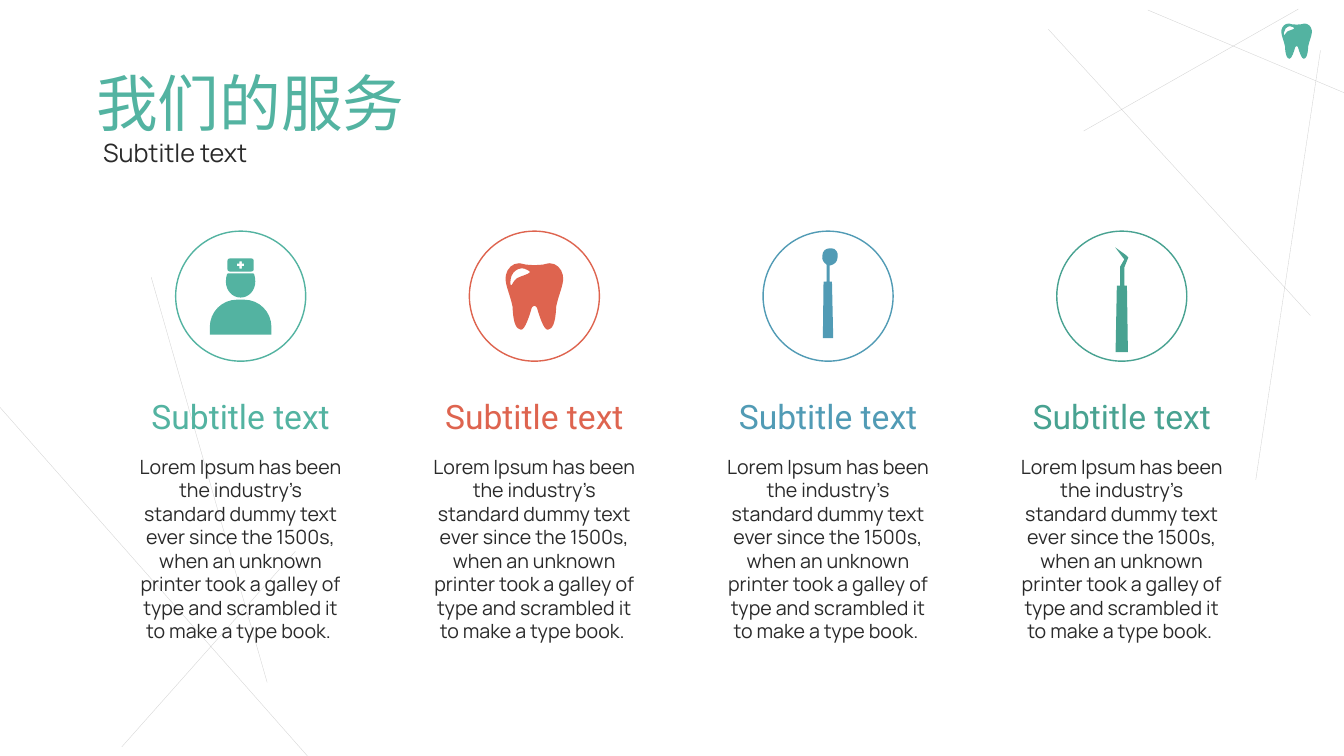
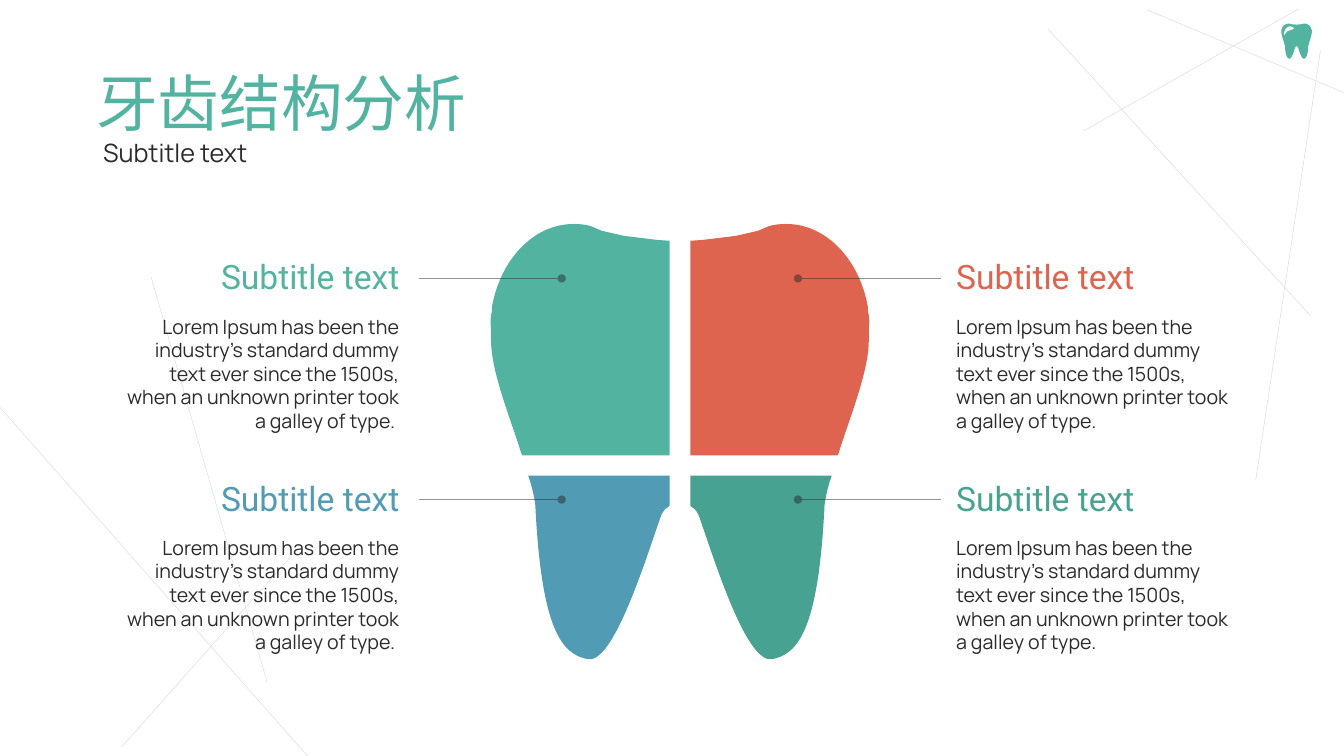
from pptx import Presentation
from pptx.dml.color import RGBColor
from pptx.enum.shapes import MSO_CONNECTOR, MSO_SHAPE
from pptx.enum.text import MSO_ANCHOR, MSO_AUTO_SIZE, PP_ALIGN
from pptx.oxml.ns import qn
from pptx.oxml.xmlchemy import OxmlElement
from pptx.util import Pt

LEFT, CENTER, RIGHT = PP_ALIGN.LEFT, PP_ALIGN.CENTER, PP_ALIGN.RIGHT
TOP, BOTTOM = MSO_ANCHOR.TOP, MSO_ANCHOR.BOTTOM
STRAIGHT, OVAL = MSO_CONNECTOR.STRAIGHT, MSO_SHAPE.OVAL
NO_FIT, GROW = MSO_AUTO_SIZE.NONE, MSO_AUTO_SIZE.SHAPE_TO_FIT_TEXT

COLORS = {
    "mint": "53B3A1",
    "coral": "DE644F",
    "blue": "519BB5",
    "green": "48A291",
    "ink": "2A2A2A",
    "white": "FFFFFF",
}

# Font size, typeface, frame settings and paragraph settings of each kind of text
STYLES = {
    "title": (44, "Noto Sans CJK SC",
              {"vertical_anchor": BOTTOM, "auto_size": NO_FIT}, {"line_spacing": 0.9}),
    "subtitle": (18, "Manrope",
                 {"vertical_anchor": TOP, "auto_size": NO_FIT},
                 {"line_spacing": 0.9, "space_before": Pt(10)}),
    "heading": (24, "Roboto",
                {"vertical_anchor": BOTTOM, "auto_size": GROW}, {"space_after": Pt(10)}),
    "body": (14, "Manrope",
             {"vertical_anchor": TOP, "auto_size": GROW}, {"space_after": Pt(10)}),
}

SUBTITLE = "Subtitle text"
SERVICE_TEXT = (
    "Lorem Ipsum has been the industry's standard dummy text ever since the 1500s, "
    "when an unknown printer took a galley of type and scrambled it to make a type book. "
)
PART_TEXT = (
    "Lorem Ipsum has been the industry's standard dummy text ever since the 1500s, "
    "when an unknown printer took a galley of type."
)
SERVICES = [
    ("dentist", "mint", SUBTITLE, SERVICE_TEXT),
    ("tooth", "coral", SUBTITLE, SERVICE_TEXT),
    ("mirror", "blue", SUBTITLE, SERVICE_TEXT),
    ("probe", "green", SUBTITLE, SERVICE_TEXT),
]
# Rows from top to bottom, each with its left and right part
TOOTH_PARTS = [
    ("crown", [("mint", SUBTITLE, PART_TEXT + " "), ("coral", SUBTITLE, PART_TEXT)]),
    ("root", [("blue", SUBTITLE, PART_TEXT + " "), ("green", SUBTITLE, PART_TEXT)]),
]

BACKGROUND_LINES = [
    ((0, 291), (219.6, 540)),
    ((108, 198), (190.8, 487.4)),
    ((211, 393.8), (87, 533.5)),
    ((748.8, 20.9), (936, 225.4)),
    ((820, 7.2), (960, 66.2)),
    ((774, 93.6), (927.4, 6.5)),
    ((897, 342.7), (943.2, 36)),
]

# Outlines: a pair is a corner, six numbers are a cubic curve.
# A "half" outline is completed by its mirror image across x = 0.
PICTOGRAMS = {
    "dentist": [
        ("half", [(0, 2.5), (2.5, 2.5), (13.3, 2.5, 22, 11.2, 22, 22), (22, 27.4), (0, 27.4)]),
        ("half", [(0, -16.2), (9.2, -16.2), (9.7, -15.5),
                  (10.2, -14, 10.5, -12.5, 10.5, -10.5), (10.5, -4, 5.8, 1, 0, 1)]),
        ("half", [(0, -27), (7.7, -27), (8.8, -27, 9.4, -26.3, 9.4, -25.3), (9.4, -19.3),
                  (9.4, -18.2, 8.8, -17.6, 7.7, -17.6), (0, -17.6)]),
        ("half", [(0, -24.9), (0.9, -24.9), (0.9, -23.2), (2.6, -23.2),
                  (2.6, -21.4), (0.9, -21.4), (0.9, -19.7), (0, -19.7)]),
    ],
    "tooth": [
        ("half", [(0, -22.1), (6, -22.5), (9.5, -23.3), (11, -23.5),
                  (15.5, -23.5, 19.4, -19.9, 20.4, -14.9), (20.6, -11.3), (20.4, -10.5),
                  (20, -6.2, 17, 0.3, 15.6, 7.5), (15, 21.1, 12.5, 23.3, 9.7, 24),
                  (6.8, 24.7, 3.2, 13.2, 1.9, 8.4), (1.2, 7.5), (0, 6.9)]),
        ("whole", [(-9, -19.9), (-10.4, -19.9, -12.6, -19.2, -14.8, -17),
                   (-17.6, -14.1, -17.2, -8.5, -16.9, -7.7),
                   (-16.2, -6.9, -14.8, -11.3, -12.6, -12.7),
                   (-10.4, -14.1, -4, -15.6, -3.2, -17),
                   (-2.5, -17.7, -6.8, -19.9, -9, -19.9)]),
    ],
    "mirror": [
        ("whole", [(-3.2, -10.4), (2.8, -10.4), (3.7, 29.9), (-3.7, 29.9)]),
        ("whole", [(1.1, -34.2), (2.5, -34.2), (5.4, -34.2, 7.6, -31.3, 6.8, -27.7),
                   (6.8, -24.8, 4.7, -22.7, 1.8, -22), (1.1, -22), (1.1, -10.4),
                   (-1.1, -10.4), (-1.1, -22.6), (-3.2, -24, -4.7, -26.3, -4, -29.2),
                   (-4, -32, -1.8, -34.2, 1.1, -34.2)]),
    ],
    "probe": [
        ("whole", [(-4.7, -34.9), (3.2, -29.2), (4.7, -27.7), (1.8, -20.5), (1.8, -7.6),
                   (3.7, -7.6), (4.4, 39.9), (-4.4, 39.9), (-3.5, -7.6), (-1.1, -7.6),
                   (-1.1, -21.2), (1.8, -26.3)]),
    ],
}
# Right-hand parts of the large tooth, x measured from its axis
PART_OUTLINES = {
    "crown": [(76, 160), (104.8, 160, 128.5, 185.8, 134.3, 219.6), (134.3, 222.5),
              (134.8, 224.6), (135.4, 228.2, 135.4, 231, 135, 234), (135, 241.2), (134.8, 247),
              (133.6, 265, 125.6, 287.3, 117, 312.5), (112.8, 325.3), (7.4, 325.3), (7.4, 172),
              (16.2, 171.4), (40, 168.5), (55.8, 164.9), (63.7, 161.5),
              (67.3, 160.4, 71.6, 160, 76, 160)],
    "root": [(7.4, 339.8), (108.4, 339.8), (107, 344), (105.5, 349.2, 104, 355, 103.3, 360.7),
             (99, 449.3, 84.6, 467.3, 65.9, 470.9), (47.2, 474.5, 24.1, 398.2, 13.3, 367.9),
             (12.6, 366.5, 11.9, 365, 10.4, 363.6), (7.4, 361.4)],
}


def rgb(color):
    return RGBColor.from_string(COLORS[color])


def pairs(segment):
    return list(zip(segment[::2], segment[1::2]))


def mirror(outline):
    """Flip an outline across x = 0 and run it backwards, keeping its curves."""
    flipped = [[(-x, y) for x, y in pairs(segment)] for segment in outline]
    result = [flipped[-1][-1]]
    for segment, before in zip(flipped[:0:-1], flipped[-2::-1]):
        points = segment[-2::-1] + [before[-1]]
        result.append(tuple(value for point in points for value in point))
    return result


def paint(shape, fill, line=None):
    shape.shadow.inherit = False
    shape.fill.solid()
    shape.fill.fore_color.rgb = rgb(fill)
    if line:
        shape.line.color.rgb = rgb(line)
        shape.line.width = Pt(1)
    else:
        shape.line.fill.background()


def add_outline(page, outlines, x, y, color, scale=1):
    """Draw closed outlines as one shape; inner outlines become holes."""
    builder = None
    for outline in outlines:
        points = [(Pt(x + px * scale), Pt(y + py * scale))
                  for segment in outline for px, py in pairs(segment)]
        if builder is None:
            builder = page.shapes.build_freeform(*points[0])
        else:
            builder.move_to(*points[0])
        builder.add_line_segments(points[1:], close=True)
    shape = builder.convert_to_shape()
    paint(shape, color)
    steps = iter(list(shape.element.iter(qn("a:lnTo"))))
    for segment in (segment for outline in outlines for segment in outline[1:]):
        group = [next(steps) for _ in pairs(segment)]
        if len(group) == 3:
            curve = OxmlElement("a:cubicBezTo")
            group[0].addprevious(curve)
            for step in group:
                curve.append(step[0])
                step.getparent().remove(step)


def add_pictogram(page, name, x, y, color, scale=1):
    outlines = [outline + mirror(outline)[1:] if kind == "half" else outline
                for kind, outline in PICTOGRAMS[name]]
    add_outline(page, outlines, x, y, color, scale)


def add_line(page, start, end, width, opacity, dot=False):
    """Draw a translucent line, with a dot at its end if asked."""
    line = page.shapes.add_connector(STRAIGHT, *(Pt(value) for value in start + end))
    line.line.color.rgb = rgb("ink")
    line.line.width = Pt(width)
    properties = line.element.spPr
    stroke = properties.find(qn("a:ln"))
    alpha = OxmlElement("a:alpha")
    alpha.set("val", str(opacity * 1000))
    stroke.find(".//" + qn("a:srgbClr")).append(alpha)
    if dot:
        tail = OxmlElement("a:tailEnd")
        tail.set("type", "oval")
        stroke.append(tail)
    properties.append(OxmlElement("a:effectLst"))


def write(box, text, style, color, align=LEFT):
    size, typeface, frame_format, paragraph_format = STYLES[style]
    frame = box.text_frame
    frame.word_wrap = True
    para = frame.paragraphs[0]
    para.alignment = align
    span = para.add_run()
    span.text = text
    font_format = {"size": Pt(size), "name": typeface}
    for target, values in ((frame, frame_format), (para, paragraph_format),
                           (span.font, font_format)):
        for name, value in values.items():
            setattr(target, name, value)
    span.font.color.rgb = rgb(color)
    east_asian = OxmlElement("a:ea")
    east_asian.set("typeface", typeface)
    box.element.find(".//" + qn("a:latin")).addnext(east_asian)


def add_text(page, area, text, style, color, align=LEFT):
    box = page.shapes.add_textbox(*(Pt(value) for value in area))
    write(box, text, style, color, align)


def add_page(deck, title):
    """Add a slide with the shared background, corner tooth, title and subtitle."""
    page = deck.slides.add_slide(deck.slide_layouts[5])
    for start, end in BACKGROUND_LINES:
        add_line(page, start, end, 0.25, 20)
    add_pictogram(page, "tooth", 926.2, 29.3, "mint", 0.53)
    heading = page.shapes.title
    area = {"left": 61.6, "top": 29.2, "width": 827, "height": 74}
    for name, value in area.items():
        setattr(heading, name, Pt(value))
    write(heading, title, "title", "mint")
    add_text(page, (66.5, 97.2, 827, 28), SUBTITLE, "subtitle", "ink")
    return page


def add_services(deck):
    page = add_page(deck, "我们的服务")
    width, step, diameter, top = 162.6, 209.8, 92.9, 165.1
    for index, (pictogram, color, heading, body) in enumerate(SERVICES):
        left = 90.6 + step * index
        middle = left + width / 2
        add_text(page, (left, 321.2, width, 143.3), body, "body", "ink", CENTER)
        add_text(page, (left, 279.4, width, 36), heading, "heading", color, CENTER)
        circle = page.shapes.add_shape(
            OVAL, Pt(middle - diameter / 2), Pt(top), Pt(diameter), Pt(diameter))
        paint(circle, "white", color)
        add_pictogram(page, pictogram, middle, top + diameter / 2, color)


def add_structure(deck):
    page = add_page(deck, "牙齿结构分析")
    axis, width, row_step = 485.7, 211, 157.9
    # Text left edge, alignment, leader start and leader end
    sides = [(81.3, RIGHT, 299.3, 401.2), (675.9, LEFT, 672, 570)]
    for row, (part, labels) in enumerate(TOOTH_PARTS):
        top = 179.5 + row_step * row
        right_half = PART_OUTLINES[part]
        halves = [mirror(right_half), right_half]
        for half, side, (color, heading, body) in zip(halves, sides, labels):
            left, align, start, end = side
            add_outline(page, [half], axis, 0, color)
            add_text(page, (left, top + 41.8, width, 92.2), body, "body", "ink", align)
            add_text(page, (left, top, width, 36), heading, "heading", color, align)
            add_line(page, (start, top + 19.4), (end, top + 19.4), 0.5, 50, dot=True)


def main():
    deck = Presentation()
    deck.slide_width, deck.slide_height = Pt(960), Pt(540)
    add_services(deck)
    add_structure(deck)
    deck.save("out.pptx")


if __name__ == "__main__":
    main()
